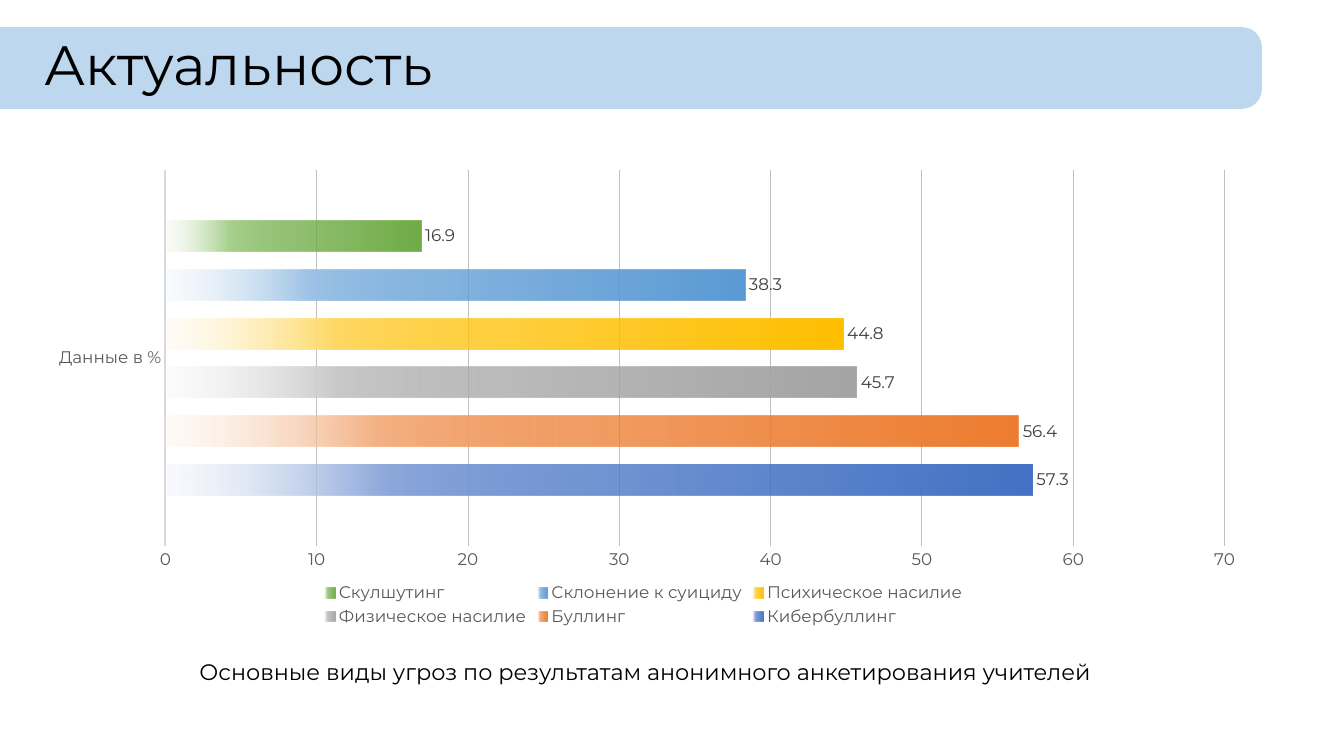
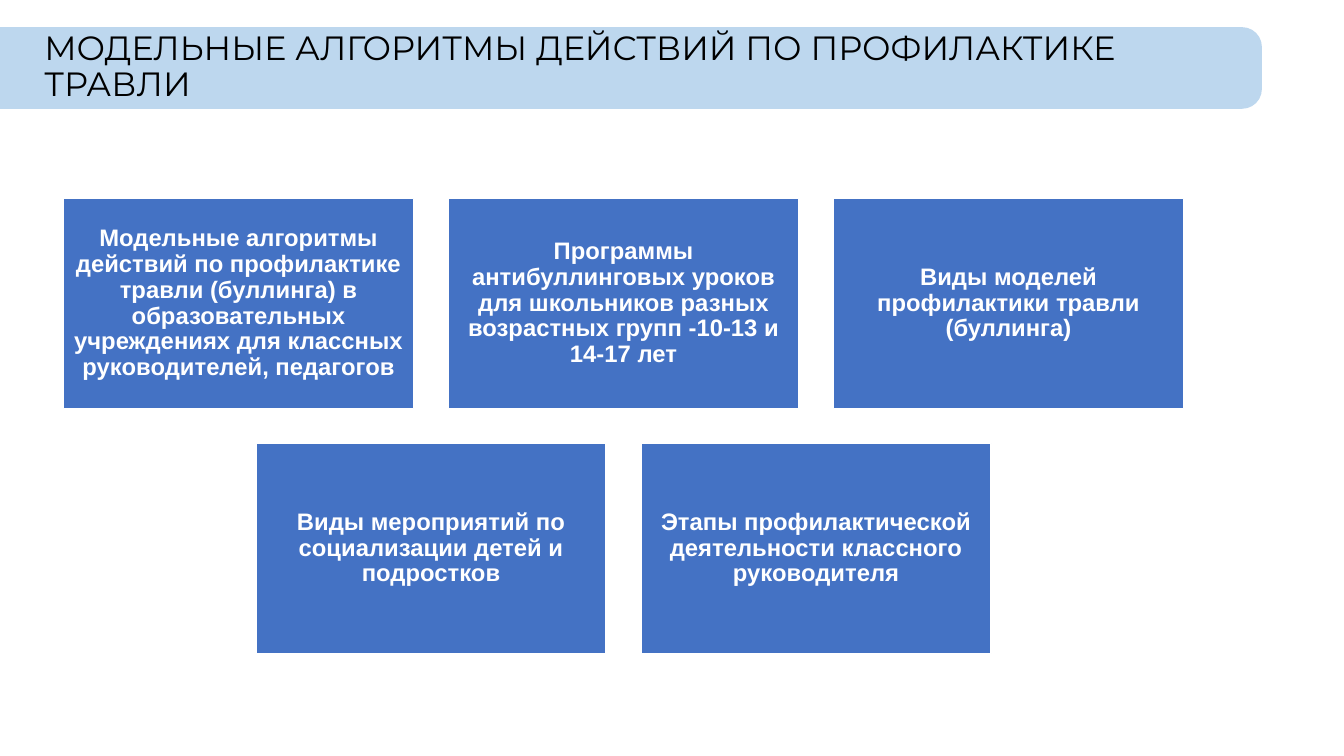
from lxml import etree
from pptx import Presentation, util as u
from pptx.chart.data import CategoryChartData
from pptx.dml.color import RGBColor
from pptx.enum import chart as ch, shapes, text
from pptx.oxml import ns, parse_xml

Pt = u.Pt
FONT = "Montserrat"
BLACK, WHITE, BAND, BLUE = "000000", "FFFFFF", "BDD7EE", "4472C4"
AXIS_TEXT, LABEL_TEXT, AXIS_LINE, GRID = "595959", "404040", "D9D9D9", "BFBFBF"

THREATS_TITLE = "Актуальность"
CATEGORY = "Данные в %"
CAPTION = "Основные виды угроз по результатам анонимного анкетирования учителей"
THREATS = [
    ("Кибербуллинг", 57.3, BLUE, "8FAADC", "DAE3F3"),
    ("Буллинг", 56.4, "ED7D31", "F4B183", "FBE5D6"),
    ("Физическое насилие", 45.7, "A5A5A5", "C9C9C9", "EDEDED"),
    ("Психическое насилие", 44.8, "FFC000", "FFD966", "FFF2CC"),
    ("Склонение к суициду", 38.3, "5B9BD5", "9DC3E6", "DEEBF7"),
    ("Скулшутинг", 16.9, "70AD47", "A9D18E", "E2F0D9"),
]
PLOT = {"x": 0.114, "y": 0.032, "w": 0.855, "h": 0.789}

MODELS_TITLE = "МОДЕЛЬНЫЕ АЛГОРИТМЫ ДЕЙСТВИЙ ПО ПРОФИЛАКТИКЕ ТРАВЛИ"
MODEL_ROWS = [
    ["Модельные алгоритмы действий по профилактике травли (буллинга) в "
     "образовательных учреждениях для классных руководителей, педагогов",
     "Программы антибуллинговых уроков для школьников разных возрастных групп "
     "-10-13 и 14-17 лет",
     "Виды моделей профилактики травли (буллинга)"],
    ["Виды мероприятий по социализации детей и подростков",
     "Этапы профилактической деятельности классного руководителя"],
]
BOX_WIDTH, BOX_HEIGHT, BOX_GAP = 250, 150, 25
GRID_CENTER, GRID_TOP = 445.4, 141.8


def rgb(color):
    return RGBColor.from_string(color)


def style_font(font, size, color, name=FONT, bold=False):
    font.size, font.name, font.bold = Pt(size), name, bold
    font.color.rgb = rgb(color)


def write(frame, words, size, color, name=FONT, bold=False, align=None, spacing=None):
    paragraph = frame.paragraphs[0]
    paragraph.alignment, paragraph.line_spacing = align, spacing
    run = paragraph.add_run()
    run.text = words
    style_font(run.font, size, color, name, bold)


def add_block(slide, kind, left, top, width, height, color):
    shape = slide.shapes.add_shape(kind, Pt(left), Pt(top), Pt(width), Pt(height))
    shape.shadow.inherit = False
    shape.fill.solid()
    shape.fill.fore_color.rgb = rgb(color)
    shape.line.fill.background()
    return shape


def add_titled_slide(presentation, title, size):
    slide = presentation.slides.add_slide(presentation.slide_layouts[5])
    band = add_block(slide, shapes.MSO_SHAPE.ROUNDED_RECTANGLE, -25.2, 19.4, 926.6, 58.3, BAND)
    band.adjustments[0] = 0.242
    placeholder = slide.shapes.title
    placeholder._element.addprevious(band._element)
    placeholder.left, placeholder.top = Pt(24.5), Pt(25.2)
    placeholder.width, placeholder.height = Pt(828), Pt(46)
    frame = placeholder.text_frame
    frame.auto_size = text.MSO_AUTO_SIZE.NONE
    frame.vertical_anchor = text.MSO_ANCHOR.MIDDLE
    write(frame, title, size, BLACK, align=text.PP_ALIGN.LEFT, spacing=0.9)
    return slide


def fade(series, strong, middle, pale):
    stops = [(0, strong, 100), (51, strong, 75), (75, middle, 100), (100, pale, 15)]
    listing = "".join(
        f'<a:gs pos="{position * 1000}"><a:srgbClr val="{color}">'
        f'<a:alpha val="{alpha * 1000}"/></a:srgbClr></a:gs>'
        for position, color, alpha in stops)
    series.format.fill.gradient()
    gradient = series._element.spPr.find(ns.qn("a:gradFill"))
    gradient.getparent().replace(gradient, parse_xml(
        f'<a:gradFill {ns.nsdecls("a")}><a:gsLst>{listing}</a:gsLst>'
        '<a:lin ang="10800000" scaled="0"/></a:gradFill>'))


def place_plot(chart):
    area = chart._chartSpace.chart.plotArea
    for old in area.findall(ns.qn("c:layout")):
        area.remove(old)
    layout = etree.Element(ns.qn("c:layout"))
    manual = etree.SubElement(layout, ns.qn("c:manualLayout"))
    settings = {"layoutTarget": "inner", "xMode": "edge", "yMode": "edge", **PLOT}
    for tag, value in settings.items():
        etree.SubElement(manual, ns.qn(f"c:{tag}")).set("val", str(value))
    area.insert(0, layout)


def add_threat_chart(slide):
    data = CategoryChartData()
    data.categories = [CATEGORY]
    for name, value, *_ in THREATS:
        data.add_series(name, [value])
    chart = slide.shapes.add_chart(
        ch.XL_CHART_TYPE.BAR_CLUSTERED, Pt(17.3), Pt(110.9), Pt(884.9), Pt(339.8), data).chart
    style_font(chart.font, 10, BLACK)
    chart.has_title = False
    chart.has_legend = True
    chart.legend.position = ch.XL_LEGEND_POSITION.BOTTOM
    chart.legend.include_in_layout = False
    style_font(chart.legend.font, 12, AXIS_TEXT)

    for axis in (chart.category_axis, chart.value_axis):
        axis.major_tick_mark = axis.minor_tick_mark = ch.XL_TICK_MARK.NONE
        style_font(axis.tick_labels.font, 12, AXIS_TEXT)
    chart.category_axis.format.line.color.rgb = rgb(AXIS_LINE)
    chart.category_axis.format.line.width = Pt(1.5)
    values = chart.value_axis
    values.minimum_scale, values.maximum_scale, values.major_unit = 0, 70, 10
    values.format.line.fill.background()
    values.has_major_gridlines = True
    values.major_gridlines.format.line.color.rgb = rgb(GRID)
    values.major_gridlines.format.line.width = Pt(0.75)

    plot = chart.plots[0]
    plot.gap_width, plot.overlap, plot.vary_by_categories = 326, -58, False
    for series, (_, _, *colors) in zip(plot.series, THREATS):
        fade(series, *colors)
        labels = series.data_labels
        labels.show_value = True
        labels.position = ch.XL_LABEL_POSITION.OUTSIDE_END
        style_font(labels.font, 12, LABEL_TEXT)
    place_plot(chart)


def add_caption(slide):
    box = slide.shapes.add_textbox(Pt(135.4), Pt(466.6), Pt(797.8), Pt(26.6))
    box.text_frame.word_wrap = True
    box.text_frame.auto_size = text.MSO_AUTO_SIZE.SHAPE_TO_FIT_TEXT
    write(box.text_frame, CAPTION, 16, BLACK)


def add_model_boxes(slide):
    for row, labels in enumerate(MODEL_ROWS):
        row_width = len(labels) * (BOX_WIDTH + BOX_GAP) - BOX_GAP
        top = GRID_TOP + row * (BOX_HEIGHT + BOX_GAP)
        for column, label in enumerate(labels):
            left = GRID_CENTER - row_width / 2 + column * (BOX_WIDTH + BOX_GAP)
            box = add_block(slide, shapes.MSO_SHAPE.RECTANGLE, left, top, BOX_WIDTH, BOX_HEIGHT, BLUE)
            box.line.color.rgb = rgb(WHITE)
            box.line.width = Pt(1)
            frame = box.text_frame
            frame.word_wrap = True
            frame.vertical_anchor = text.MSO_ANCHOR.MIDDLE
            frame.margin_left = frame.margin_right = Pt(5)
            frame.margin_top = frame.margin_bottom = Pt(5)
            write(frame, label, 17, WHITE, "Arial", True, text.PP_ALIGN.CENTER, 0.9)


def main():
    presentation = Presentation()
    presentation.slide_width, presentation.slide_height = Pt(960), Pt(540)
    threats = add_titled_slide(presentation, THREATS_TITLE, 39.6)
    add_threat_chart(threats)
    add_caption(threats)
    add_model_boxes(add_titled_slide(presentation, MODELS_TITLE, 24))
    presentation.save("out.pptx")


if __name__ == "__main__":
    main()
